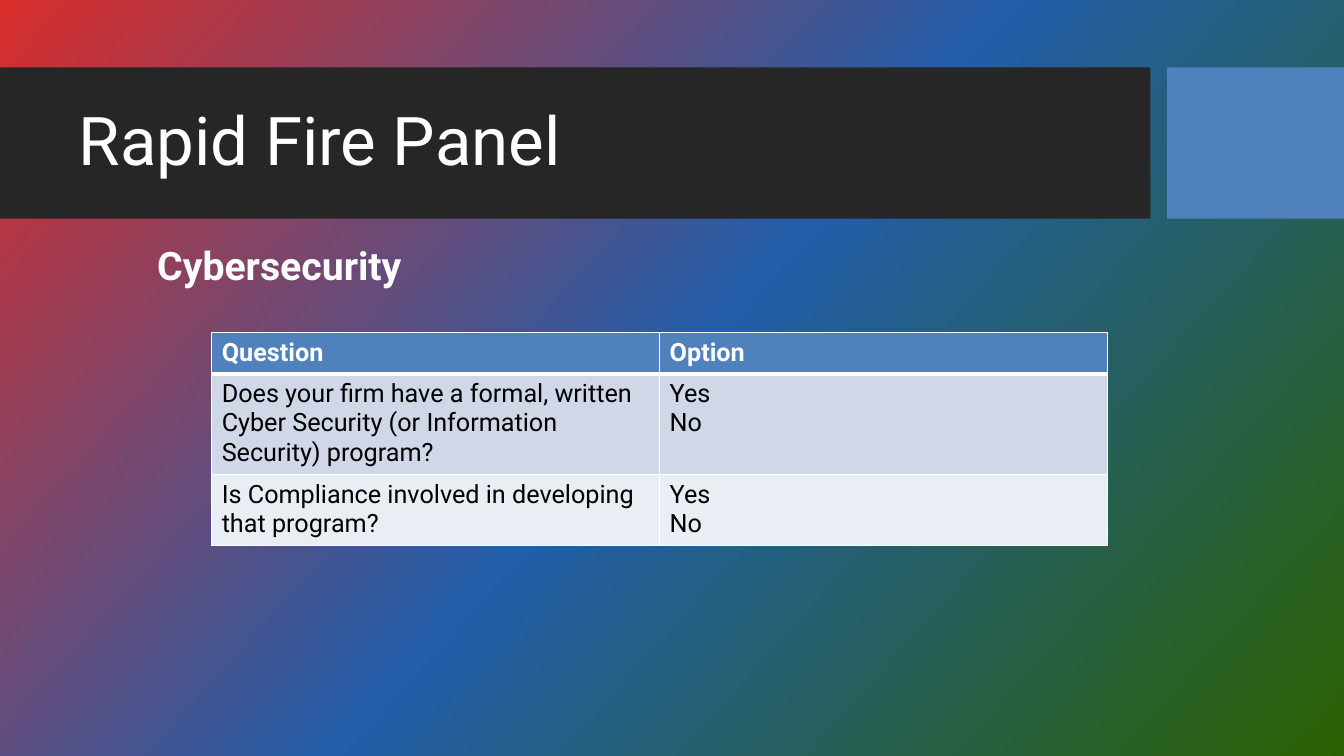
from lxml.etree import SubElement
from pptx import Presentation
from pptx.dml.color import RGBColor
from pptx.enum.shapes import MSO_SHAPE as Shape
from pptx.enum.text import MSO_ANCHOR as Anchor, MSO_AUTO_SIZE as AutoSize, PP_ALIGN as Align
from pptx.oxml import parse_xml
from pptx.oxml.ns import nsdecls, qn
from pptx.util import Inches, Pt

WHITE = RGBColor(0xFF, 0xFF, 0xFF)
BLACK = RGBColor(0x00, 0x00, 0x00)
CHARCOAL = RGBColor(0x26, 0x26, 0x26)
ACCENT = RGBColor(0x4F, 0x81, 0xBD)
BAND_DARK = RGBColor(0xD0, 0xD8, 0xE8)
BAND_LIGHT = RGBColor(0xE9, 0xED, 0xF4)
RED = RGBColor(0xD9, 0x2D, 0x2A)
BLUE = RGBColor(0x22, 0x5E, 0xA9)
GREEN = RGBColor(0x2A, 0x61, 0x00)

BAND_TOP, BAND_HEIGHT = 8.93, 20
ROW_HEIGHTS = [5.47, 13.33, 9.33]
ROWS = [
    ("Question", "Option"),
    ("Does your firm have a formal, written Cyber Security (or Information Security) program?", "Yes\nNo"),
    ("Is Compliance involved in developing that program?", "Yes\nNo"),
]


def write(frame, text, size, color, bold=False, font="Roboto", line_spacing=None, bullets=True):
    frame.text = text
    frame.word_wrap = True
    for paragraph in frame.paragraphs:
        if not bullets:
            properties = paragraph._p.get_or_add_pPr()
            properties.set("marL", "0")
            properties.set("indent", "0")
            SubElement(properties, qn("a:buNone"))
        paragraph.alignment = Align.LEFT
        paragraph.space_before = Pt(0)
        paragraph.line_spacing = line_spacing
        for run in paragraph.runs:
            run.font.name = font
            run.font.size = Pt(size)
            run.font.bold = bold
            run.font.color.rgb = color


class Deck:
    def __init__(self, width, height):
        self.presentation = Presentation()
        self.presentation.slide_width = Inches(width)
        self.presentation.slide_height = Inches(height)
        self.slide = self.presentation.slides.add_slide(self.presentation.slide_layouts[1])

    def across(self, percent):
        return round(self.presentation.slide_width * percent / 100)

    def down(self, percent):
        return round(self.presentation.slide_height * percent / 100)

    def box(self, left, top, width, height):
        return self.across(left), self.down(top), self.across(width), self.down(height)

    def background(self, colors, angle):
        fill = self.slide.background.fill
        fill.gradient()
        fill.gradient_angle = 360 - angle
        stops = next(self.slide.element.iter(qn("a:gsLst")))
        for stop in list(stops):
            stops.remove(stop)
        for index, color in enumerate(colors):
            stop = SubElement(stops, qn("a:gs"), pos=str(index * 100000 // (len(colors) - 1)))
            SubElement(stop, qn("a:srgbClr"), val=str(color))

    def band(self, left, width, color):
        shapes = self.slide.shapes
        shape = shapes.add_shape(Shape.RECTANGLE, *self.box(left, BAND_TOP, width, BAND_HEIGHT))
        shape.shadow.inherit = False
        shape.fill.solid()
        shape.fill.fore_color.rgb = color
        shape.line.fill.background()
        shapes.element.remove(shape.element)
        shapes.element.insert(2, shape.element)

    def placeholder(self, index, text, place, anchor, **style):
        shape = self.slide.placeholders[index]
        shape.left, shape.top, shape.width, shape.height = self.box(*place)
        frame = shape.text_frame
        write(frame, text, color=WHITE, **style)
        frame.auto_size = AutoSize.NONE
        frame.vertical_anchor = anchor

    def border(self, cell, sides):
        properties = cell._tc.get_or_add_tcPr()
        for index, (side, points) in enumerate(sides.items()):
            properties.insert(index, parse_xml(
                f'<a:ln{side} {nsdecls("a")} w="{Pt(points)}"><a:solidFill>'
                f'<a:srgbClr val="{WHITE}"/></a:solidFill></a:ln{side}>'))

    def table(self, rows, left, top, width, heights):
        columns = len(rows[0])
        place = self.box(left, top, width, sum(heights))
        table = self.slide.shapes.add_table(len(rows), columns, *place).table
        for column in table.columns:
            column.width = self.across(width / columns)
        for row_index, texts in enumerate(rows):
            table.rows[row_index].height = self.down(heights[row_index])
            header = row_index == 0
            fill = ACCENT if header else (BAND_LIGHT, BAND_DARK)[row_index % 2]
            for column_index, text in enumerate(texts):
                cell = table.cell(row_index, column_index)
                cell.fill.solid()
                cell.fill.fore_color.rgb = fill
                write(cell.text_frame, text, 18, WHITE if header else BLACK, bold=header)
                self.border(cell, {"L": 1, "R": 1, "T": 3 if row_index == 1 else 1, "B": 3 if header else 1})


def main():
    deck = Deck(13.33, 7.5)
    deck.background([RED, BLUE, GREEN], 42)
    deck.band(0, 85.6, CHARCOAL)
    deck.band(86.85, 13.15, ACCENT)
    deck.placeholder(0, "Rapid Fire Panel", (5.1, 12.4, 80.5, 13.33), Anchor.MIDDLE, size=48, line_spacing=0.9)
    deck.placeholder(1, "Cybersecurity", (10.95, 31.2, 87.4, 57.87), Anchor.TOP, size=28, bold=True, bullets=False)
    deck.table(ROWS, 15.75, 44, 66.66, ROW_HEIGHTS)
    deck.presentation.save("out.pptx")


if __name__ == "__main__":
    main()
